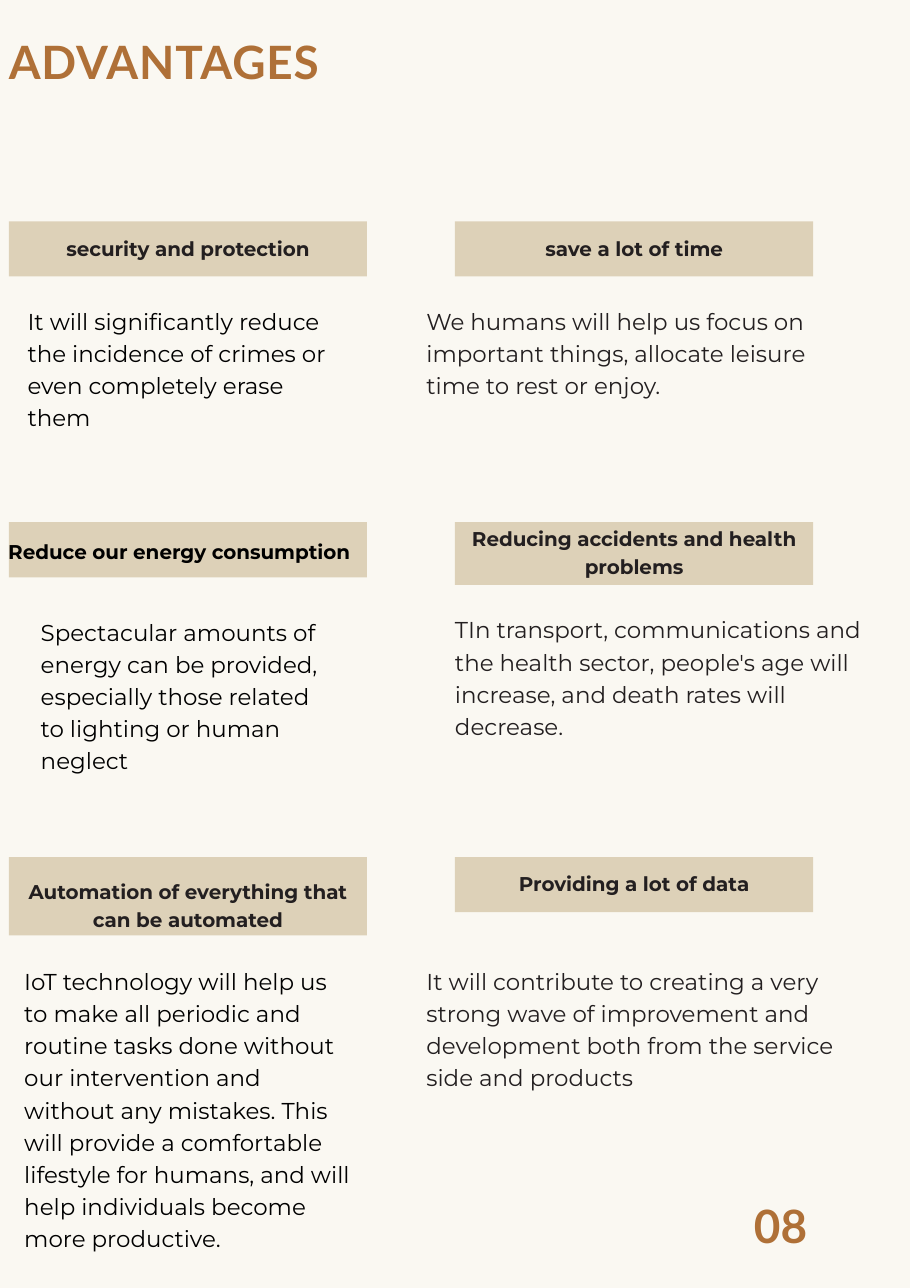
from pptx import Presentation
from pptx.dml.color import RGBColor
from pptx.enum import shapes, text
from pptx.util import Inches, Pt

COLORS = {"paper": "FAF8F2", "bar": "DDD1B8", "accent": "AF7037",
          "ink": "231F20", "black": "000000"}
COLUMN_LEFTS = [0.08, 4.13]
ROW_TOPS = [2.01, 4.74, 7.78]
BAR_WIDTH = 3.25
LABEL_HEIGHT = 0.55

# One row per pair of advantages, left column first.
# bar: height; label: left, vertical middle, colour; body: left, top, width, height
ADVANTAGES = [
    [
        {"title": "security and protection", "bar": 0.5, "label": (0.08, 2.235, "ink"),
         "body": (0.25, 2.75, 2.92, 1.17),
         "text": "It will significantly reduce the incidence of crimes or even "
                 "completely erase them"},
        {"title": "save a lot of time", "bar": 0.5, "label": (4.13, 2.235, "ink"),
         "body": (3.87, 2.75, 3.79, 0.88),
         "text": "We humans will help us focus on important things, allocate "
                 "leisure time to rest or enjoy."},
    ],
    [
        {"title": "Reduce our energy consumption", "bar": 0.5, "label": (0, 4.985, "black"),
         "body": (0.37, 5.57, 2.67, 1.4),
         "text": "Spectacular amounts of energy can be provided, especially those "
                 "related to lighting or human neglect"},
        {"title": "Reducing accidents and health problems", "bar": 0.57,
         "label": (4.13, 5, "ink"), "body": (4.13, 5.55, 3.79, 1.17),
         "text": "TIn transport, communications and the health sector, people's age "
                 "will increase, and death rates will decrease."},
    ],
    [
        {"title": "Automation of everything that can be automated", "bar": 0.71,
         "label": (0.08, 8.2, "ink"), "body": (0.22, 8.74, 2.98, 2.52),
         "text": "IoT technology will help us to make all periodic and routine tasks "
                 "done without our intervention and without any mistakes. This will "
                 "provide a comfortable lifestyle for humans, and will help "
                 "individuals become more productive."},
        {"title": "Providing a lot of data", "bar": 0.5, "label": (4.13, 8.005, "ink"),
         "body": (3.87, 8.74, 3.79, 1.17),
         "text": "It will contribute to creating a very strong wave of improvement "
                 "and development both from the service side and products"},
    ],
]
BODY_COLORS = ["black", "ink"]
HEADING = {"font": "Lato", "size": 30, "leading": 35.4, "bold": True}
LABEL = {"font": "Montserrat", "size": 13, "leading": 18.2, "bold": True}
BODY = {"font": "Montserrat", "size": 15, "leading": 21, "bold": False}


def color(name):
    return RGBColor.from_string(COLORS[name])


def add_text(slide, box, words, style, color_name, centered=False, middle=False, spacing=0):
    """Add a text box; spacing is the letter spacing in hundredths of a point."""
    frame = slide.shapes.add_textbox(*map(Inches, box)).text_frame
    frame.word_wrap = True
    frame.margin_left = frame.margin_right = 0
    frame.margin_top = frame.margin_bottom = 0
    frame.vertical_anchor = text.MSO_ANCHOR.MIDDLE if middle else text.MSO_ANCHOR.TOP
    paragraph = frame.paragraphs[0]
    paragraph.alignment = text.PP_ALIGN.CENTER if centered else text.PP_ALIGN.LEFT
    paragraph.line_spacing = Pt(style["leading"])
    run = paragraph.add_run()
    run.text = words
    run.font.name = style["font"]
    run.font.size = Pt(style["size"])
    run.font.bold = style["bold"]
    run.font.color.rgb = color(color_name)
    if spacing:
        run.font._element.set("spc", str(spacing))


def add_bar(slide, left, top, height):
    bar = slide.shapes.add_shape(shapes.MSO_SHAPE.RECTANGLE,
                                 *map(Inches, (left, top, BAR_WIDTH, height)))
    bar.shadow.inherit = False
    bar.fill.solid()
    bar.fill.fore_color.rgb = color("bar")
    bar.line.fill.background()


def main():
    presentation = Presentation()
    presentation.slide_width = Inches(8.26)
    presentation.slide_height = Inches(11.69)
    slide = presentation.slides.add_slide(presentation.slide_layouts[6])
    slide.background.fill.solid()
    slide.background.fill.fore_color.rgb = color("paper")

    add_text(slide, (0.08, 0.31, 3.57, 0.52), "ADVANTAGES", HEADING, "accent", spacing=60)
    add_text(slide, (6.73, 10.88, 0.71, 0.52), "08", HEADING, "accent", centered=True)

    for top, row in zip(ROW_TOPS, ADVANTAGES):
        for left, body_color, item in zip(COLUMN_LEFTS, BODY_COLORS, row):
            add_bar(slide, left, top, item["bar"])
            label_left, label_middle, label_color = item["label"]
            label_box = (label_left, label_middle - LABEL_HEIGHT / 2, BAR_WIDTH, LABEL_HEIGHT)
            add_text(slide, label_box, item["title"], LABEL, label_color,
                     centered=True, middle=True)
            add_text(slide, item["body"], item["text"], BODY, body_color)

    presentation.save("out.pptx")


if __name__ == "__main__":
    main()
